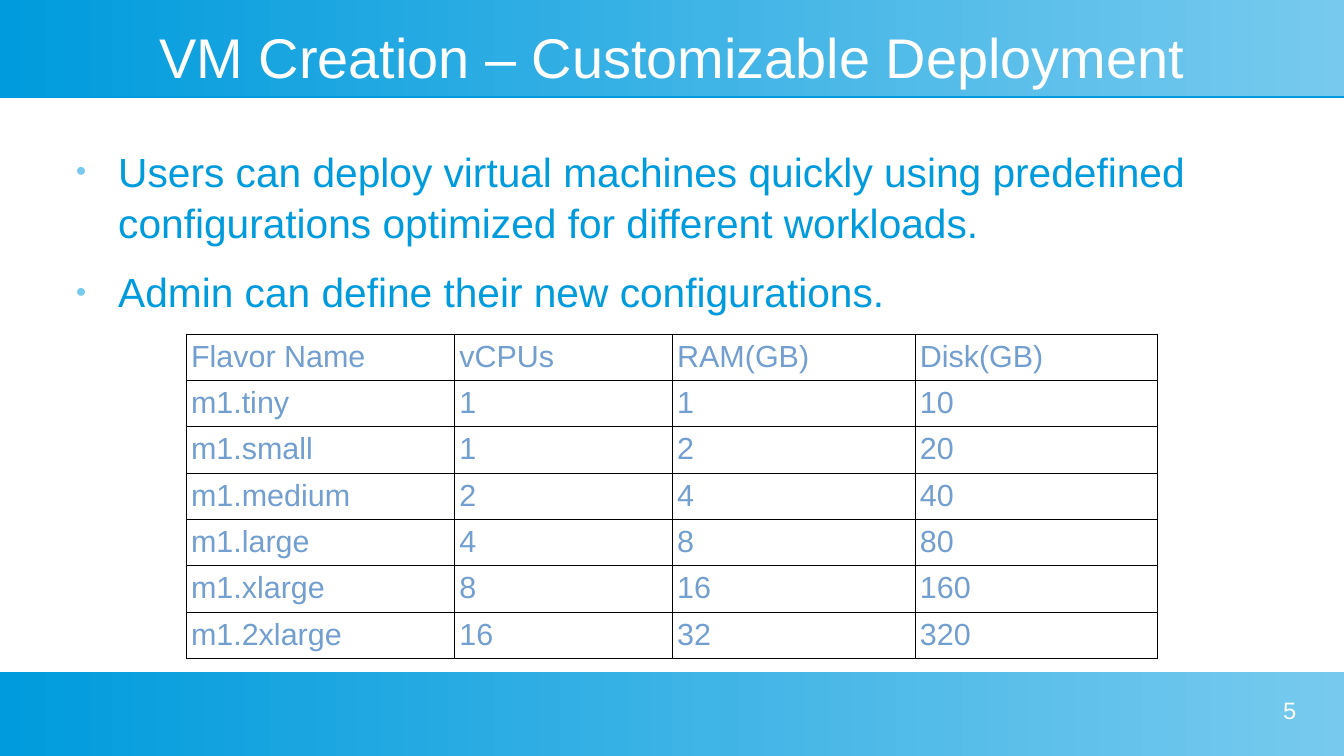
from dataclasses import dataclass

from lxml.etree import SubElement
from pptx import Presentation
from pptx.dml.color import RGBColor
from pptx.enum.shapes import MSO_SHAPE
from pptx.enum.text import MSO_ANCHOR, MSO_AUTO_SIZE, PP_ALIGN
from pptx.oxml.ns import qn
from pptx.util import Pt


@dataclass(frozen=True)
class Theme:
    font: str = "Arial"
    deep_blue: str = "009BDD"
    light_blue: str = "77CAEE"
    table_text: str = "729FCF"
    border: str = "000000"
    white: str = "FFFFFF"
    title_size: float = 33
    body_size: float = 24
    table_size: float = 18
    number_size: float = 14
    border_width: float = 0.57


@dataclass(frozen=True)
class Box:
    left: float
    top: float
    width: float
    height: float

    def lengths(self):
        return Pt(self.left), Pt(self.top), Pt(self.width), Pt(self.height)


THEME = Theme()
SLIDE_WIDTH, SLIDE_HEIGHT = 793.44, 446.4
BANDS = [Box(0, 0, SLIDE_WIDTH, 56.9), Box(0, 396.7, SLIDE_WIDTH, 49.7)]
TITLE_BOX = Box(28.1, 14.4, 737.3, 37.4)
BODY_BOX = Box(36, 85, 737.3, 283.7)
TABLE_BOX = Box(110, 197.3, 573.6, 191.6)
NUMBER_BOX = Box(581, 411.1, 184.3, 28.1)

BULLETS = [
    "Users can deploy virtual machines quickly using predefined "
    "configurations optimized for different workloads.",
    "Admin can define their new configurations.",
]
FLAVOR_COLUMNS = [158.4, 128.6, 143.3, 143.3]
FLAVORS = [
    ("Flavor Name", "vCPUs", "RAM(GB)", "Disk(GB)"),
    ("m1.tiny", "1", "1", "10"),
    ("m1.small", "1", "2", "20"),
    ("m1.medium", "2", "4", "40"),
    ("m1.large", "4", "8", "80"),
    ("m1.xlarge", "8", "16", "160"),
    ("m1.2xlarge", "16", "32", "320"),
]


def set_font(paragraph, size: float, color: str) -> None:
    font = paragraph.font
    font.name, font.size = THEME.font, Pt(size)
    font.color.rgb = RGBColor.from_string(color)


def place(shape, box: Box, anchor: MSO_ANCHOR):
    """Put a text shape in its box, without insets or fitting."""
    shape.left, shape.top, shape.width, shape.height = box.lengths()
    frame = shape.text_frame
    frame.margin_left = frame.margin_top = Pt(0)
    frame.margin_right = frame.margin_bottom = Pt(0)
    frame.word_wrap = True
    frame.auto_size = MSO_AUTO_SIZE.NONE
    frame.vertical_anchor = anchor
    return frame


def add_band(slide, box: Box) -> None:
    """Add a gradient band with a hard shadow below, behind all else."""
    band = slide.shapes.add_shape(MSO_SHAPE.RECTANGLE, *box.lengths())
    band.line.fill.background()
    band.fill.gradient()
    band.fill.gradient_angle = 0
    for stop, color in zip(band.fill.gradient_stops, (THEME.deep_blue, THEME.light_blue)):
        stop.color.rgb = RGBColor.from_string(color)
    band.shadow.inherit = False
    effects = band.element.spPr.find(qn("a:effectLst"))
    shadow = SubElement(effects, qn("a:outerShdw"), blurRad="0",
                        dist=str(Pt(0.9)), dir="5400000", rotWithShape="0")
    SubElement(shadow, qn("a:srgbClr"), val=THEME.deep_blue)
    slide.shapes.element.insert(2, band.element)


def set_bullet(paragraph) -> None:
    properties = paragraph._p.get_or_add_pPr()
    properties.set("marL", str(Pt(33.8)))
    properties.set("indent", str(Pt(-25.2)))
    color = SubElement(properties, qn("a:buClr"))
    SubElement(color, qn("a:srgbClr"), val=THEME.light_blue)
    SubElement(properties, qn("a:buSzPct"), val="45000")
    SubElement(properties, qn("a:buChar"), char="●")


def fill_title(slide) -> None:
    frame = place(slide.shapes.title, TITLE_BOX, MSO_ANCHOR.MIDDLE)
    frame.text = "VM Creation – Customizable Deployment"
    heading = frame.paragraphs[0]
    heading.alignment = PP_ALIGN.CENTER
    set_font(heading, THEME.title_size, THEME.white)


def fill_body(slide) -> None:
    frame = place(slide.placeholders[1], BODY_BOX, MSO_ANCHOR.TOP)
    frame.text = "\n".join(BULLETS)
    for paragraph in frame.paragraphs:
        paragraph.line_spacing = 1.05
        paragraph.space_before = Pt(10.6)
        set_bullet(paragraph)
        set_font(paragraph, THEME.body_size, THEME.deep_blue)


def set_borders(cell) -> None:
    properties = cell._tc.get_or_add_tcPr()
    for index, side in enumerate(("a:lnL", "a:lnR", "a:lnT", "a:lnB")):
        line = properties.makeelement(qn(side), {"w": str(Pt(THEME.border_width))})
        fill = SubElement(line, qn("a:solidFill"))
        SubElement(fill, qn("a:srgbClr"), val=THEME.border)
        properties.insert(index, line)


def add_flavor_table(slide) -> None:
    table = slide.shapes.add_table(
        len(FLAVORS), len(FLAVOR_COLUMNS), *TABLE_BOX.lengths()).table
    table.first_row = table.horz_banding = False
    for column, width in zip(table.columns, FLAVOR_COLUMNS):
        column.width = Pt(width)
    for row, flavor in zip(table.rows, FLAVORS):
        row.height = Pt(TABLE_BOX.height / len(FLAVORS))
        for cell, value in zip(row.cells, flavor):
            cell.text = value
            cell.margin_left = cell.margin_right = Pt(2.8)
            cell.margin_top = cell.margin_bottom = Pt(3.3)
            cell.fill.background()
            set_borders(cell)
            set_font(cell.text_frame.paragraphs[0], THEME.table_size, THEME.table_text)


def add_page_number(slide) -> None:
    number = slide.shapes.add_textbox(*NUMBER_BOX.lengths())
    frame = place(number, NUMBER_BOX, MSO_ANCHOR.TOP)
    frame.text = "5"
    frame.paragraphs[0].alignment = PP_ALIGN.RIGHT
    set_font(frame.paragraphs[0], THEME.number_size, THEME.white)


def main() -> None:
    deck = Presentation()
    deck.slide_width, deck.slide_height = Pt(SLIDE_WIDTH), Pt(SLIDE_HEIGHT)
    slide = deck.slides.add_slide(deck.slide_layouts[1])
    for band in BANDS:
        add_band(slide, band)
    fill_title(slide)
    fill_body(slide)
    add_flavor_table(slide)
    add_page_number(slide)
    deck.save("out.pptx")


if __name__ == "__main__":
    main()
